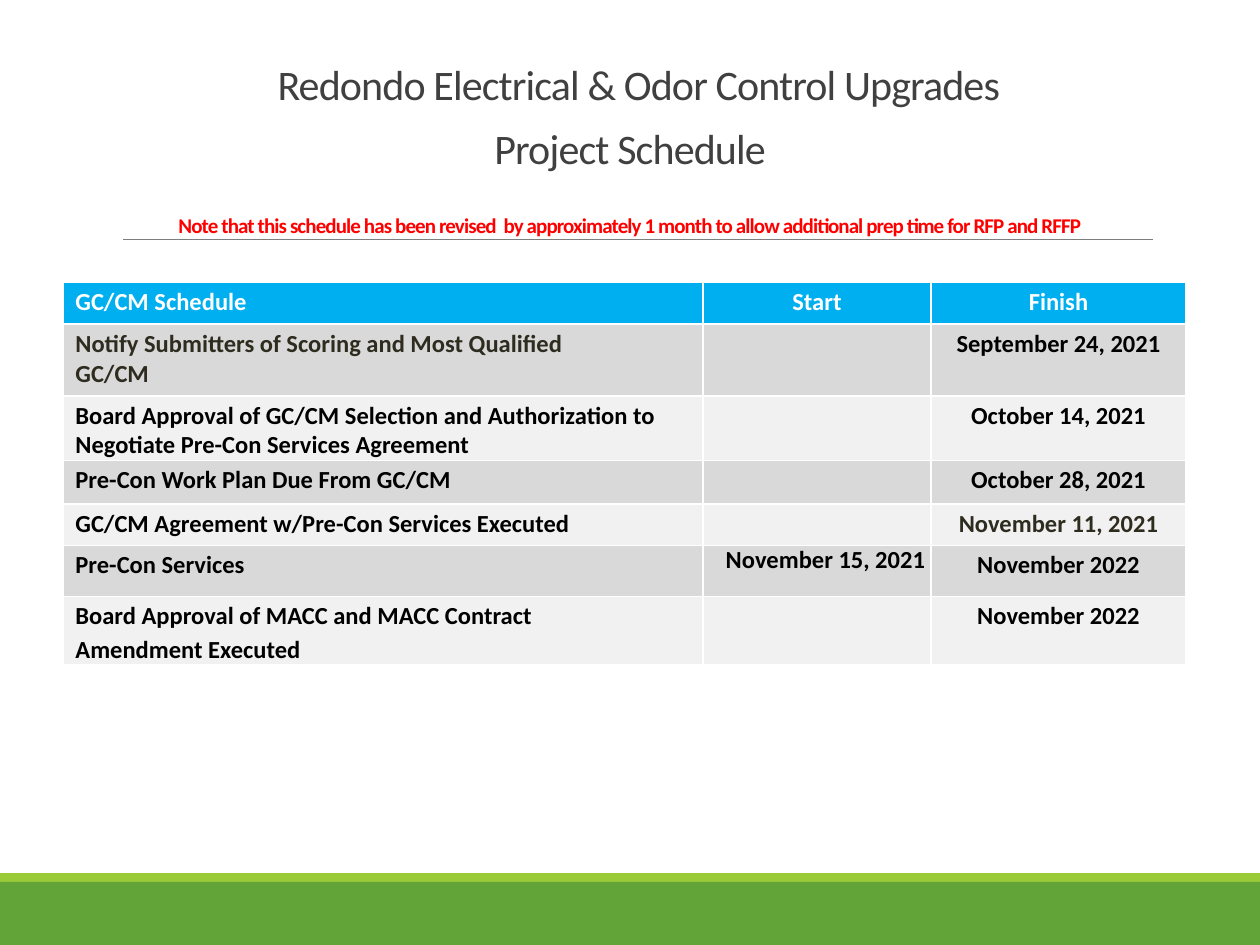
from collections import namedtuple
from dataclasses import dataclass

from lxml import etree
from pptx import Presentation
from pptx.dml.color import RGBColor
from pptx.enum.shapes import MSO_CONNECTOR, MSO_SHAPE
from pptx.enum.text import MSO_ANCHOR, PP_ALIGN
from pptx.oxml.ns import qn
from pptx.util import Cm, Pt

RECT, STRAIGHT = MSO_SHAPE.RECTANGLE, MSO_CONNECTOR.STRAIGHT
TOP, LEFT, CENTER = MSO_ANCHOR.TOP, PP_ALIGN.LEFT, PP_ALIGN.CENTER

Box = namedtuple("Box", "x y w h")


@dataclass(frozen=True)
class Theme:
    font: str = "Calibri"
    title: str = "404040"
    note: str = "FF0000"
    header: str = "00AFEF"
    white: str = "FFFFFF"
    black: str = "000000"
    muted: str = "2E2B1F"
    bands: tuple = ("D9D9D9", "F1F1F1")
    rule: str = "7E7E7E"
    green: str = "62A437"
    lime: str = "99CA38"
    title_size: int = 24
    note_size: int = 12
    cell_size: int = 14


T = Theme()

TITLE = ("Redondo Electrical & Odor Control Upgrades", "Project Schedule")
NOTE = ("Note that this schedule has been revised  by approximately 1 month "
        "to allow additional prep time for RFP and RFFP")
ROWS = [
    (0.84, "GC/CM Schedule", "Start", "Finish"),
    (1.45, "Notify Submitters of Scoring and Most Qualified GC/CM", "",
     "September 24, 2021"),
    (1.3, "Board Approval of GC/CM Selection and Authorization to Negotiate "
          "Pre-Con Services Agreement", "", "October 14, 2021"),
    (0.88, "Pre-Con Work Plan Due From GC/CM", "", "October 28, 2021"),
    (0.84, "GC/CM Agreement w/Pre-Con Services Executed", "",
     "November 11, 2021"),
    (1.02, "Pre-Con Services", "November 15, 2021", "November 2022"),
    (1.35, "Board Approval of MACC and MACC Contract\nAmendment Executed", "",
     "November 2022"),
]
COLS = (12.9, 4.6, 5.14)
MUTED_CELLS = {(1, 0), (4, 2)}
START_CELL = (5, 1)
NARROW_CELL = (1, 0)


def apply(obj, **values):
    for name, value in values.items():
        setattr(obj, name, value)


def style_run(r, size, color, bold=False, spacing=0):
    apply(r.font, name=T.font, size=Pt(size), bold=bold)
    r.font.color.rgb = RGBColor.from_string(color)
    r._r.get_or_add_rPr().set("spc", str(spacing))


def paint(fill, color):
    fill.solid()
    fill.fore_color.rgb = RGBColor.from_string(color)


def add_footer(s, box):
    stripe = 0.18
    for y, h, color in ((0, stripe, T.lime), (stripe, box.h - stripe, T.green)):
        sp = s.shapes.add_shape(RECT, Cm(box.x), Cm(box.y + y), Cm(box.w), Cm(h))
        sp.shadow.inherit = False
        paint(sp.fill, color)
        sp.line.fill.background()


def add_title(s, box):
    sp = s.shapes.add_textbox(Cm(box.x), Cm(box.y), Cm(box.w), Cm(box.h))
    tf = sp.text_frame
    apply(tf, word_wrap=True, vertical_anchor=TOP, margin_left=0,
          margin_right=0, margin_top=Cm(0.28), margin_bottom=0)
    p = tf.paragraphs[0]
    apply(p, alignment=CENTER, line_spacing=Pt(36.7), space_before=Pt(7.6))
    p._p.get_or_add_pPr().set("indent", str(Cm(0.35)))
    for line in TITLE:
        r = p.add_run()
        r.text = line
        style_run(r, T.title_size, T.title, spacing=-50)
        p.add_line_break()
    r = p.add_run()
    r.text = NOTE
    style_run(r, T.note_size, T.note, bold=True, spacing=-50)


def add_rule(s, box):
    c = s.shapes.add_connector(STRAIGHT, Cm(box.x), Cm(box.y),
                               Cm(box.x + box.w), Cm(box.y + box.h))
    c.line.width = Pt(0.48)
    c.line.color.rgb = RGBColor.from_string(T.rule)
    etree.SubElement(c._element.spPr, qn("a:effectLst"))


def add_borders(cell):
    tcPr = cell._tc.get_or_add_tcPr()
    for i, side in enumerate(("lnL", "lnR", "lnT", "lnB")):
        ln = etree.Element(qn(f"a:{side}"), w=str(Pt(1)))
        fill = etree.SubElement(ln, qn("a:solidFill"))
        etree.SubElement(fill, qn("a:srgbClr"), val=T.white)
        tcPr.insert(i, ln)


def fill_cell(cell, row, col, text):
    pos = (row, col)
    start = pos == START_CELL
    paint(cell.fill, T.bands[(row - 1) % 2] if row else T.header)
    add_borders(cell)
    left = 0.46 if start else 0.25 if col == 0 else 0
    apply(cell, margin_left=Cm(left), margin_bottom=0,
          margin_right=Cm(2) if pos == NARROW_CELL else 0,
          margin_top=Cm(0.1) if text and not start else 0)
    color = T.muted if pos in MUTED_CELLS else T.black if row else T.white
    tf = cell.text_frame
    tf.text = text
    for p in tf.paragraphs:
        apply(p, alignment=LEFT if col == 0 or start else CENTER,
              space_before=Pt(0 if start else 2.6))
        for r in p.runs:
            style_run(r, T.cell_size, color, bold=True)


def add_schedule(s, box):
    tbl = s.shapes.add_table(len(ROWS), len(COLS), Cm(box.x), Cm(box.y),
                             Cm(box.w), Cm(box.h)).table
    for column, width in zip(tbl.columns, COLS):
        column.width = Cm(width)
    for i, (height, *texts) in enumerate(ROWS):
        tbl.rows[i].height = Cm(height)
        for j, text in enumerate(texts):
            fill_cell(tbl.cell(i, j), i, j, text)


def main():
    prs = Presentation()
    apply(prs, slide_width=Cm(25.4), slide_height=Cm(19.05))
    s = prs.slides.add_slide(prs.slide_layouts[6])
    add_footer(s, Box(0, 17.6, 25.4, 1.45))
    add_rule(s, Box(2.48, 4.83, 20.77, 0))
    add_title(s, Box(2.97, 0.62, 19.46, 4.11))
    add_schedule(s, Box(1.27, 5.69, sum(COLS), sum(row[0] for row in ROWS)))
    prs.save("out.pptx")


if __name__ == "__main__":
    main()
